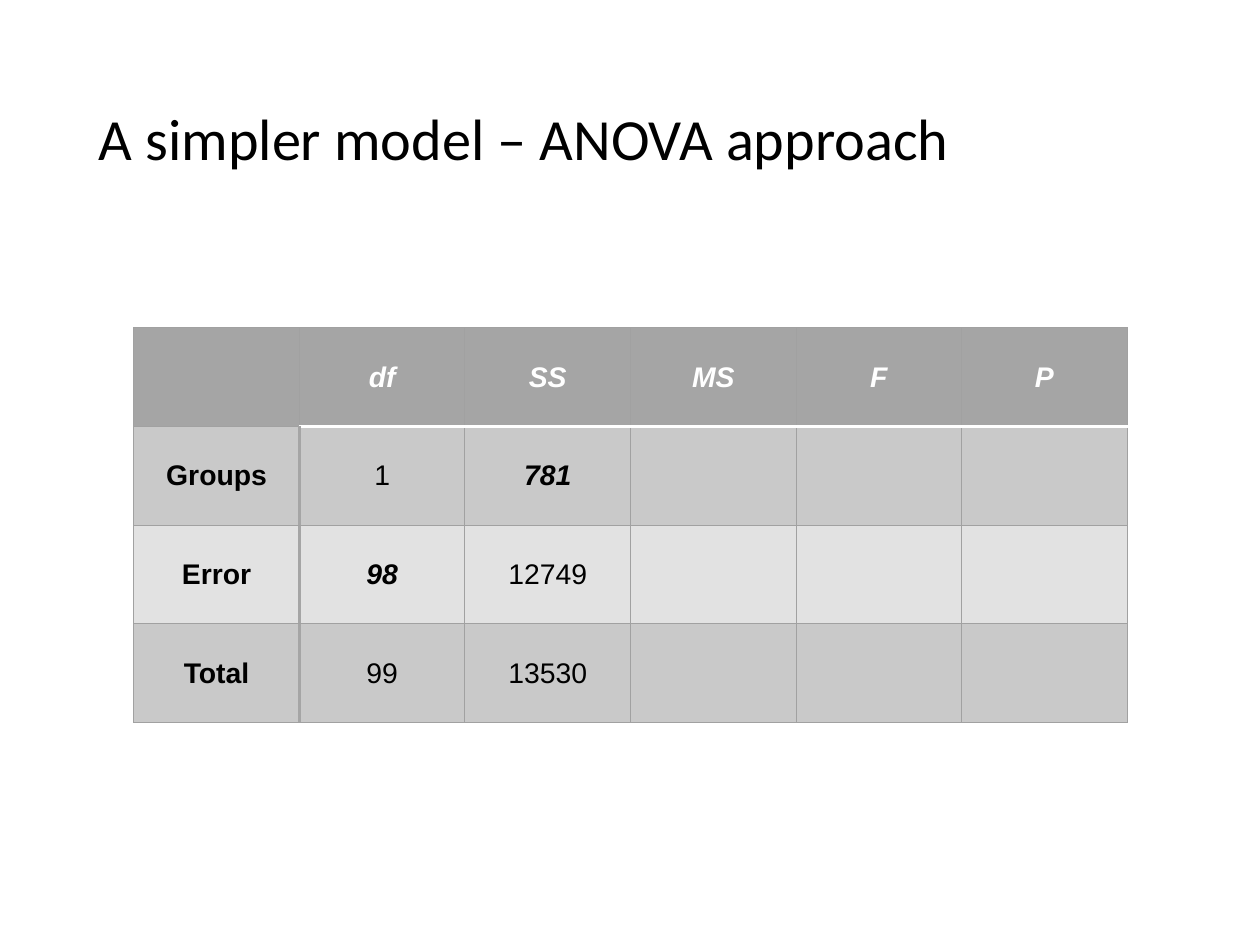
from lxml import etree
from pptx import Presentation
from pptx import util as u
from pptx.dml.color import RGBColor
from pptx.enum import text
from pptx.oxml.ns import qn

COLORS = {"ink": "000000", "header": "A5A5A5", "band": "C9C9C9",
          "plain": "E2E2E2", "grid": "A1A1A1", "white": "FFFFFF"}
ANOVA = [
    ["", "df", "SS", "MS", "F", "P"],
    ["Groups", "1", "781", "", "", ""],
    ["Error", "98", "12749", "", "", ""],
    ["Total", "99", "13530", "", "", ""],
]
COMPUTED = {"781", "98"}
COL_WIDTH, ROW_HEIGHT = u.Inches(1.46), u.Inches(0.87)


def style_run(run, color, **font_format):
    run.font.color.rgb = RGBColor.from_string(COLORS[color])
    for attribute, value in font_format.items():
        setattr(run.font, attribute, value)


def add_border(cell, side, color, points):
    """Draw one cell edge; side is L, R, T or B."""
    edge = etree.SubElement(cell._tc.get_or_add_tcPr(), qn(f"a:ln{side}"),
                            w=str(u.Pt(points)))
    fill = etree.SubElement(edge, qn("a:solidFill"))
    etree.SubElement(fill, qn("a:srgbClr"), val=COLORS[color])


prs = Presentation()
prs.slide_width, prs.slide_height = u.Inches(11.11), u.Inches(8.33)
slide = prs.slides.add_slide(prs.slide_layouts[6])

title = slide.shapes.add_textbox(u.Inches(0.76), u.Inches(0.44),
                                 u.Inches(9.58), u.Inches(1.61)).text_frame
title_format = {"word_wrap": True, "vertical_anchor": text.MSO_ANCHOR.MIDDLE}
title_format.update({f"margin_{side}": u.Inches(0.11)
                     for side in ("left", "top", "right", "bottom")})
for attribute, value in title_format.items():
    setattr(title, attribute, value)
heading = title.paragraphs[0]
heading.line_spacing = 0.9
heading_run = heading.add_run()
heading_run.text = "A simpler model – ANOVA approach"
style_run(heading_run, "ink", name="Calibri", size=u.Pt(37))

n_rows, n_cols = len(ANOVA), len(ANOVA[0])
anova_table = slide.shapes.add_table(
    n_rows, n_cols, u.Inches(1.18), u.Inches(2.89),
    n_cols * COL_WIDTH, n_rows * ROW_HEIGHT).table
for column in anova_table.columns:
    column.width = COL_WIDTH
for row in anova_table.rows:
    row.height = ROW_HEIGHT

for r, values in enumerate(ANOVA):
    for c, value in enumerate(values):
        cell = anova_table.cell(r, c)
        is_header = r == 0
        borders = dict.fromkeys("LRTB", ("grid", 0.75))
        if c > 0 and r < 2:
            borders["B" if is_header else "T"] = ("white", 2)
        if c < 2 and not is_header:
            borders["R" if c == 0 else "L"] = ("header", 2)
        for side, (color, points) in borders.items():
            add_border(cell, side, color, points)

        cell.fill.solid()
        row_color = "header" if is_header else "band" if r % 2 else "plain"
        cell.fill.fore_color.rgb = RGBColor.from_string(COLORS[row_color])
        cell.vertical_anchor = text.MSO_ANCHOR.MIDDLE
        if value:
            entry = cell.text_frame.paragraphs[0]
            entry.alignment = text.PP_ALIGN.CENTER
            entry_run = entry.add_run()
            entry_run.text = value
            emphasised = is_header or value in COMPUTED
            style_run(entry_run, "white" if is_header else "ink", name="Arial",
                      size=u.Pt(18), bold=emphasised or c == 0, italic=emphasised)

prs.save("out.pptx")
